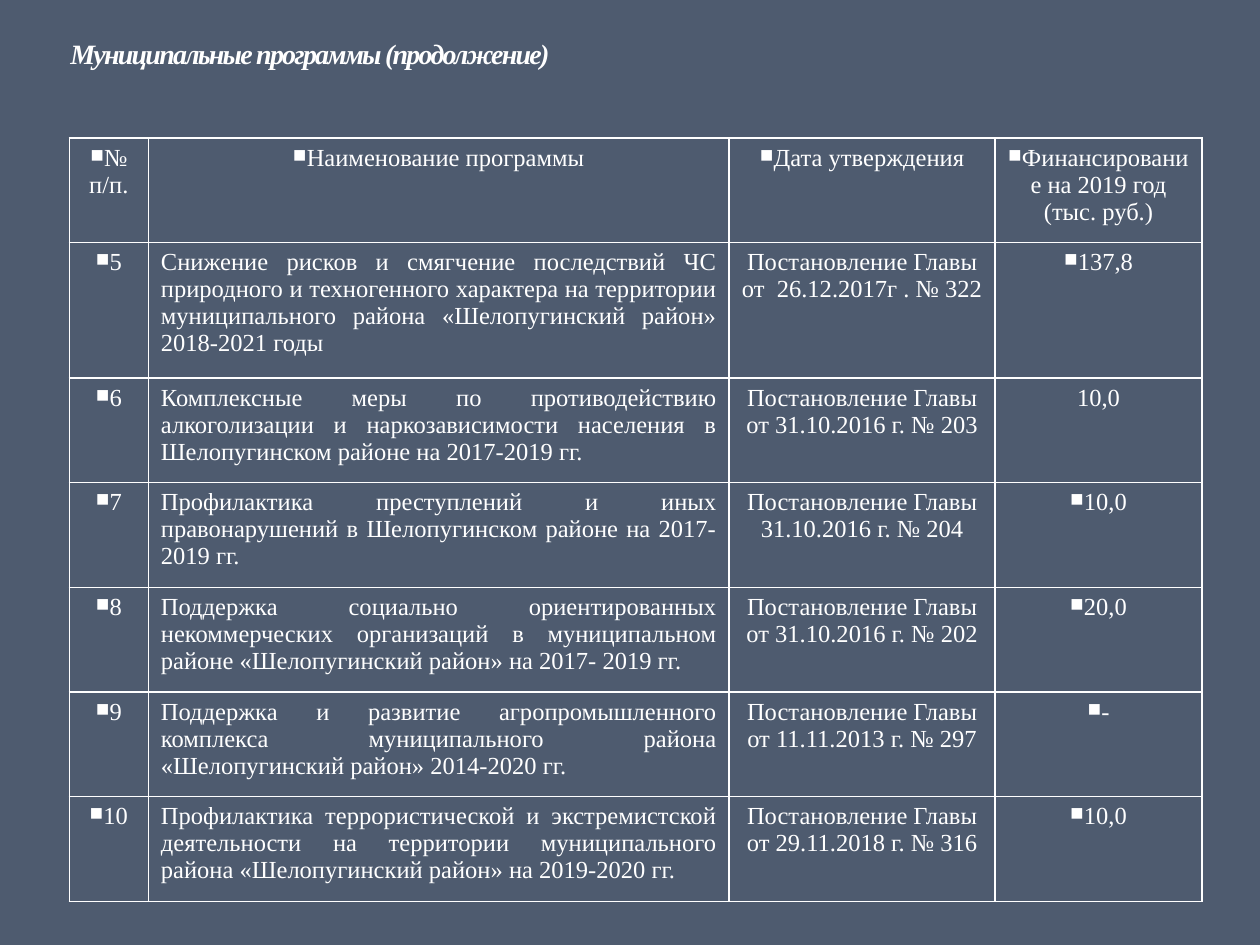
from lxml import etree
from pptx import Presentation
from pptx.dml.color import RGBColor
from pptx.enum import text
from pptx.oxml import ns
from pptx.util import Cm, Pt

TITLE = "Муниципальные программы (продолжение)"
HEADERS = ("№ п/п.", "Наименование программы", "Дата утверждения",
           "Финансирование на 2019 год (тыс. руб.)")
PROGRAMS = [
    ("5", "Снижение рисков и смягчение последствий ЧС природного и техногенного характера "
          "на территории муниципального района «Шелопугинский район» 2018-2021 годы",
     "Постановление Главы от  26.12.2017г . № 322", "137,8"),
    ("6", "Комплексные меры по противодействию алкоголизации и наркозависимости населения "
          "в Шелопугинском районе на 2017-2019 гг.",
     "Постановление Главы от 31.10.2016 г. № 203", "10,0"),
    ("7", "Профилактика преступлений и иных правонарушений в Шелопугинском районе "
          "на 2017-2019 гг.",
     "Постановление Главы 31.10.2016 г. № 204", "10,0"),
    ("8", "Поддержка социально ориентированных некоммерческих организаций "
          "в муниципальном районе «Шелопугинский район» на 2017- 2019 гг.",
     "Постановление Главы от 31.10.2016 г. № 202", "20,0"),
    ("9", "Поддержка и развитие агропромышленного комплекса муниципального района "
          "«Шелопугинский район» 2014-2020 гг.",
     "Постановление Главы от 11.11.2013 г. № 297", "-"),
    ("10", "Профилактика террористической и экстремистской деятельности на территории "
           "муниципального района «Шелопугинский район» на 2019-2020 гг.",
     "Постановление Главы от 29.11.2018 г. № 316", "10,0"),
]
PLAIN_FUNDING = {"6"}
COLUMN_WIDTHS = (1.59, 11.71, 5.36, 4.17)
ROW_HEIGHT = 2.11
TALL_ROWS = {1: 2.73}
THEME = {"back": "4E5B6F", "ink": "FFFFFF", "font": "Times New Roman",
         "title": 16, "body": 14, "line": 1, "bullet": "■", "bullet_percent": 75}


def add_xml(parent, tag, **attributes):
    return etree.SubElement(parent, ns.qn(tag), attributes)


def write(frame, words, size=THEME["body"], align=text.PP_ALIGN.CENTER,
          bullet=False, bold=False, italic=False, spacing=None):
    para = frame.paragraphs[0]
    para.alignment = align
    span = para.add_run()
    span.text = words
    font = span.font
    font.name, font.size, font.bold, font.italic = THEME["font"], Pt(size), bold, italic
    font.color.rgb = RGBColor.from_string(THEME["ink"])
    if spacing is not None:
        font._element.set("spc", str(spacing * 100))
    if bullet:
        properties = para._p.get_or_add_pPr()
        properties.set("marL", "0")
        properties.set("indent", "0")
        color = add_xml(properties, "a:buClr")
        add_xml(color, "a:srgbClr", val=THEME["ink"])
        add_xml(properties, "a:buSzPct", val=str(THEME["bullet_percent"] * 1000))
        add_xml(properties, "a:buChar", char=THEME["bullet"])


def outline(cell):
    properties = cell._tc.get_or_add_tcPr()
    for side in ("L", "R", "T", "B"):
        line = add_xml(properties, f"a:ln{side}", w=str(Pt(THEME["line"])))
        fill = add_xml(line, "a:solidFill")
        add_xml(fill, "a:srgbClr", val=THEME["ink"])
    cell.fill.background()


def add_title(page):
    box = page.shapes.add_textbox(Cm(0), Cm(0.58), Cm(12.5), Cm(1))
    frame = box.text_frame
    frame.word_wrap = True
    frame.vertical_anchor = text.MSO_ANCHOR.MIDDLE
    write(frame, TITLE, size=THEME["title"], bold=True, italic=True, spacing=-1)


def add_programs(page):
    rows = [HEADERS, *PROGRAMS]
    heights = [TALL_ROWS.get(index, ROW_HEIGHT) for index in range(len(rows))]
    table = page.shapes.add_table(len(rows), len(HEADERS), Cm(1.4), Cm(2.78),
                                  Cm(sum(COLUMN_WIDTHS)), Cm(sum(heights))).table
    table.first_row = table.horz_banding = False
    for column, width in zip(table.columns, COLUMN_WIDTHS):
        column.width = Cm(width)
    for row, height in zip(table.rows, heights):
        row.height = Cm(height)
    for row_index, values in enumerate(rows):
        for column_index, words in enumerate(values):
            header = row_index == 0
            justified = column_index == 1 and not header
            funding_plain = column_index == 3 and values[0] in PLAIN_FUNDING
            bullet = header or (column_index in (0, 3) and not funding_plain)
            cell = table.cell(row_index, column_index)
            outline(cell)
            write(cell.text_frame, words, bullet=bullet,
                  align=text.PP_ALIGN.JUSTIFY if justified else text.PP_ALIGN.CENTER)


def main():
    deck = Presentation()
    deck.slide_width, deck.slide_height = Cm(25.4), Cm(19.05)
    page = deck.slides.add_slide(deck.slide_layouts[6])
    page.background.fill.solid()
    page.background.fill.fore_color.rgb = RGBColor.from_string(THEME["back"])
    add_title(page)
    add_programs(page)
    deck.save("out.pptx")


if __name__ == "__main__":
    main()
